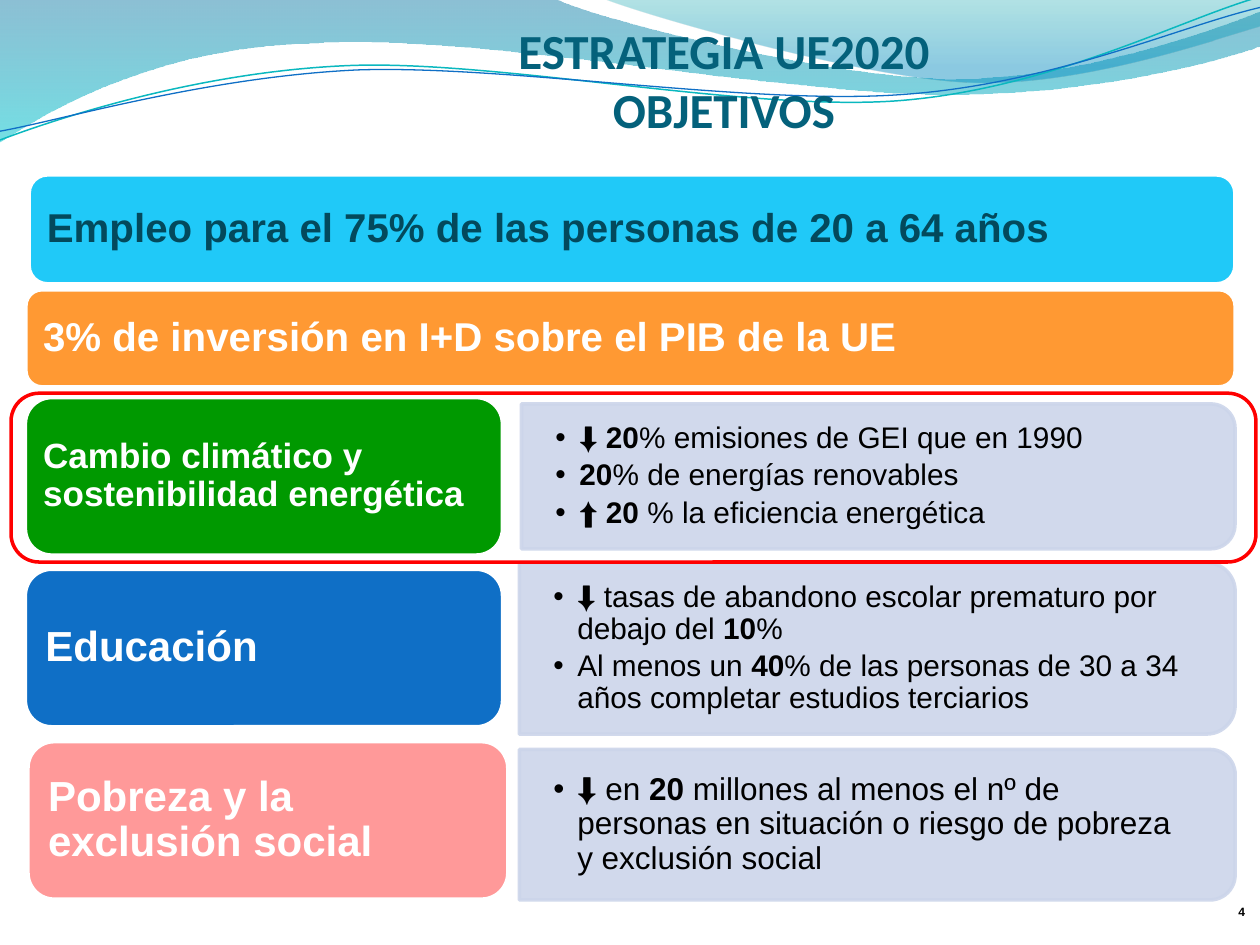
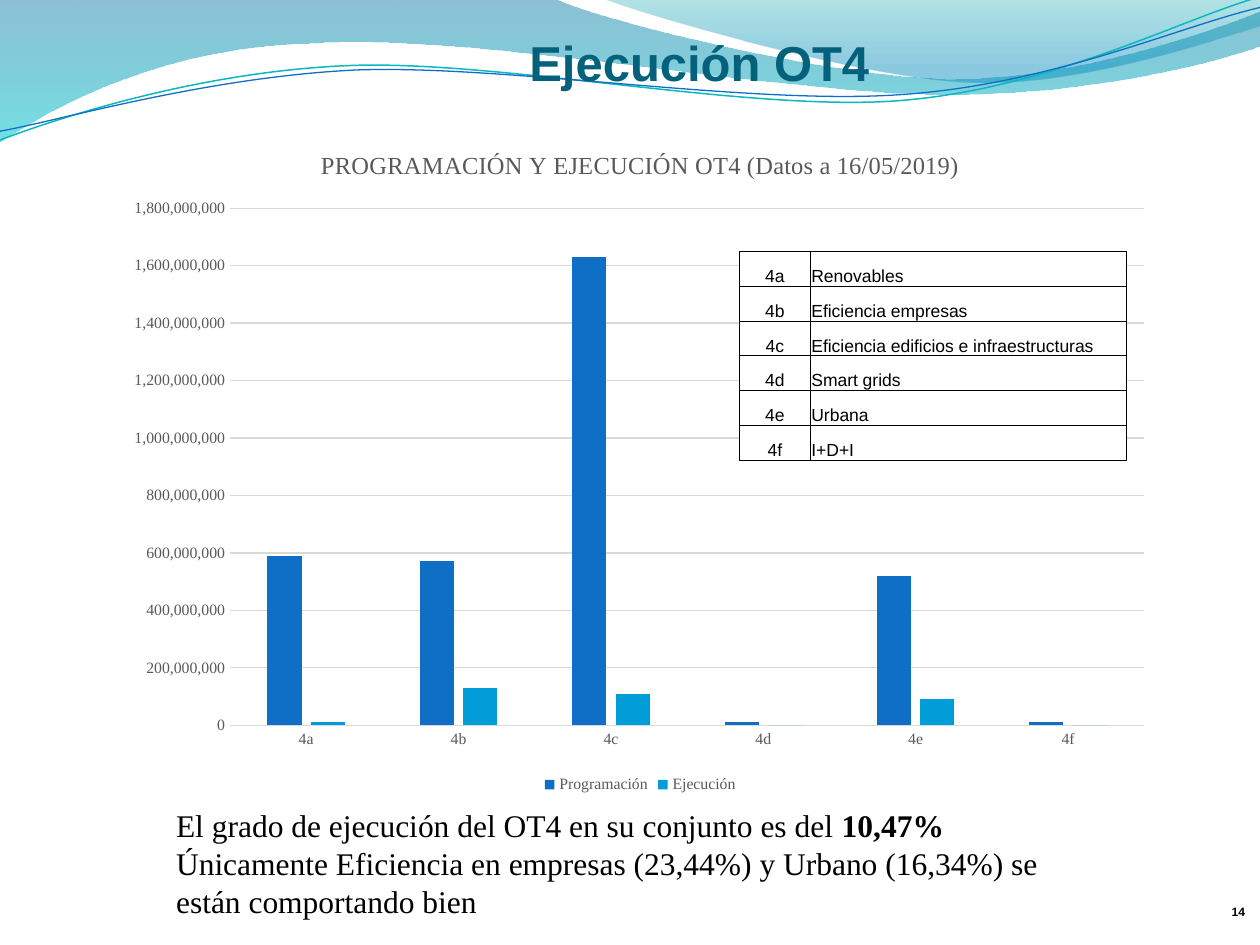
from dataclasses import dataclass

from lxml import etree
from pptx import Presentation
from pptx.chart import data as cd
from pptx.dml.color import RGBColor
from pptx.enum import chart as ch, shapes as sh, text as tx
from pptx.oxml import ns
from pptx.util import Pt


@dataclass(frozen=True)
class Theme:
    title: str = "04617B"
    ink: str = "000000"
    white: str = "FFFFFF"
    gray: str = "595959"
    grid: str = "D9D9D9"
    panel: str = "CCD5EA"
    blue: str = "0F6FC6"
    teal: str = "0AB8BF"
    sky: str = "009DD9"
    red: str = "FF0000"
    sans: str = "Arial"
    serif: str = "Times New Roman"
    head: int = 28
    bar: int = 23
    note: int = 18
    cap: int = 14
    cell: int = 10
    axis: int = 9


T = Theme()
MID, TOP, LOW = tx.MSO_ANCHOR.MIDDLE, tx.MSO_ANCHOR.TOP, tx.MSO_ANCHOR.BOTTOM
LEFT, MIDDLE, RIGHT = tx.PP_ALIGN.LEFT, tx.PP_ALIGN.CENTER, tx.PP_ALIGN.RIGHT
ROUND = sh.MSO_SHAPE.ROUNDED_RECTANGLE

# A pair is a straight step, six numbers are a curve (two controls, end).
BANDS = [
    ([(0, 0), (317, -0.7), (343, 12, 478, 45, 546, 45), (614, 45, 690, 18.7, 720, 6.5),
      (720.7, 26), (708, 32, 626, 55, 537, 54), (448, 54, 275, 20, 185, 24.5),
      (93, 26, 33, 60, -0.7, 81.4)], [(0, "0074A1", 45), (1, "00C6CF", 55)]),
    ([(345, -0.7), (366, 8, 491, 44.6, 554, 47), (616, 49.7, 692, 23, 720, 15),
      (720, 0)], [(0, "00A1A9", 30), (0.8, "008BBF", 45)]),
]
CURVES = [
    ([(0, 80), (34.5, 67, 114, 41, 199, 37.5), (284, 34, 427, 64, 513, 57.6),
      (600, 51, 675, 11, 718.6, -1.4)], T.teal, 0.85),
    ([(0, 75), (34, 69, 118, 44, 204, 40), (290, 37, 430, 60.5, 516, 54),
      (602, 48, 674, 15, 720, 4.3)], T.blue, 0.75),
]


def rgb(code):
    return RGBColor.from_string(code)


def put(obj, **vals):
    for key, val in vals.items():
        setattr(obj, key, val)


def place(shape, box):
    put(shape, **dict(zip(("left", "top", "width", "height"), map(Pt, box))))


def sub(parent, tag, **attrs):
    return etree.SubElement(parent, ns.qn(tag), attrs)


def font(f, size, color, name=T.sans, bold=False):
    put(f, size=Pt(size), name=name, bold=bold)
    f.color.rgb = rgb(color)


def fade(shape, *alphas):
    """Set the opacity, in percent, of the shape's colours in turn."""
    for node, part in zip(shape.element.iter(ns.qn("a:srgbClr")), alphas):
        sub(node, "a:alpha", val=str(part * 1000))


def frame(shape, ins=(7.2, 3.6, 7.2, 3.6), anchor=MID):
    tf = shape.text_frame
    put(tf, word_wrap=True, auto_size=tx.MSO_AUTO_SIZE.NONE, vertical_anchor=anchor)
    sides = ("margin_left", "margin_top", "margin_right", "margin_bottom")
    put(tf, **dict(zip(sides, map(Pt, ins))))
    return tf


def write(tf, lines, size, color, name=T.sans, bold=False, align=LEFT,
          gap=1.0, after=0, dot=None):
    """Fill a frame with paragraphs; **marks** enclose bold words."""
    for i, line in enumerate(lines):
        par = tf.add_paragraph() if i else tf.paragraphs[0]
        ppr = par._p.get_or_add_pPr()
        hang = Pt(13.7) if dot else 0
        ppr.set("marL", str(hang))
        ppr.set("indent", str(-hang))
        if dot:
            sub(ppr, "a:buFont", typeface=T.sans)
            sub(ppr, "a:buChar", char=dot)
        else:
            sub(ppr, "a:buNone")
        put(par, alignment=align, line_spacing=gap, space_before=Pt(0),
            space_after=Pt(after))
        for k, bit in enumerate(line.split("**")):
            if bit:
                run = par.add_run()
                run.text = bit
                font(run.font, size, color, name, bold or k % 2 == 1)


def block(slide, kind, box, fill=None, line=T.white):
    shape = slide.shapes.add_shape(kind, *map(Pt, box))
    shape.shadow.inherit = False
    if fill:
        shape.fill.solid()
        shape.fill.fore_color.rgb = rgb(fill)
    else:
        shape.fill.background()
    shape.line.color.rgb = rgb(line)
    shape.line.width = Pt(2)
    return shape


def outline(slide, steps, close):
    """Join the step ends, then bend the curved steps."""
    ends = [(Pt(s[-2]), Pt(s[-1])) for s in steps]
    pen = slide.shapes.build_freeform(*ends[0], scale=1.0)
    pen.add_line_segments(ends[1:], close=close)
    shape = pen.convert_to_shape()
    shape.shadow.inherit = False
    for leg, step in zip(list(shape.element.iter(ns.qn("a:lnTo"))), steps[1:]):
        if len(step) == 6:
            bend = etree.Element(ns.qn("a:cubicBezTo"))
            for x, y in zip(step[::2], step[1::2]):
                sub(bend, "a:pt", x=str(Pt(x) - shape.left), y=str(Pt(y) - shape.top))
            leg.getparent().replace(leg, bend)
    return shape


def waves(prs, slide):
    """Draw the header waves and hand them to the slide master."""
    made = []
    for steps, stops in BANDS:
        band = outline(slide, steps, True)
        band.line.fill.background()
        band.fill.gradient()
        band.fill.gradient_angle = 270
        for stop, (pos, code, _) in zip(band.fill.gradient_stops, stops):
            stop.position = pos
            stop.color.rgb = rgb(code)
        fade(band, *(s[2] for s in stops))
        made.append(band)
    for steps, code, width in CURVES:
        curve = outline(slide, steps, False)
        curve.fill.background()
        curve.line.color.rgb = rgb(code)
        curve.line.width = Pt(width)
        made.append(curve)
    tree = prs.slide_master.shapes.element
    for i, shape in enumerate(made):
        next(shape.element.iter(ns.qn("p:cNvPr"))).set("id", str(100 + i))
        tree.insert(2 + i, shape.element)


def head(slide, box, lines, name):
    title = slide.shapes.title
    place(title, box)
    write(frame(title, (0, 0, 0, 0)), lines, T.head, T.title, name, True, MIDDLE)


def number(slide, num):
    box = slide.shapes.add_textbox(*map(Pt, (677.8, 508.3, 33.8, 23)))
    write(frame(box, (0, 0, 0, 1.3), LOW), [num], 12, T.ink, bold=True, align=RIGHT)
    box.text_frame.paragraphs[0].runs[0].font._element.set("baseline", "30000")


def bar(slide, box, words, fill, color, size=T.bar, ins=(7.2, 3.6, 7.2, 3.6)):
    shape = block(slide, ROUND, box, fill)
    write(frame(shape, ins), [words], size, color, bold=True, gap=0.9)


def panel(slide, body, box, lines, size):
    """A list on a plate whose right corners are rounded."""
    x, y, w, h = box
    turned = (x + (w - h) / 2, y + (h - w) / 2, h, w)
    plate = block(slide, sh.MSO_SHAPE.ROUND_2_SAME_RECTANGLE, turned, T.panel, T.panel)
    plate.rotation = 90
    fade(plate, 90, 90)
    place(body, box)
    slide.shapes.element.append(body.element)
    write(frame(body, (19.4, 10, 23, 10)), lines, size, T.ink, gap=0.9, after=3, dot="•")


def prune(slide):
    for item in list(slide.placeholders):
        if not item.text_frame.text:
            item.element.getparent().remove(item.element)


def goals(slide):
    head(slide, (212.4, 15, 402.5, 61.2), ["ESTRATEGIA UE2020", "OBJETIVOS"], "Calibri")
    bar(slide, (16.7, 100, 689, 62.2),
        "Empleo para el 75% de las personas de 20 a 64 años", "20C9F8", "03495C")
    bar(slide, (14.8, 165.6, 691, 55.5),
        "3% de inversión en I+D sobre el PIB de la UE", "FF9933", T.white)
    rows = [
        ("Cambio climático y sostenibilidad energética", "009900", 20,
         (14.5, 227.2, 272.6, 90), (298, 230.8, 407.7, 82.8), 17,
         ["⬇ **20**% emisiones de GEI que en 1990", "**20**% de energías renovables",
          "⬆ **20** % la eficiencia energética"]),
        ("Educación", T.blue, 24,
         (14.5, 325.3, 272.7, 90), (296.8, 321.5, 409, 98), 17,
         ["⬇ tasas de abandono escolar prematuro por debajo del **10**%",
          "Al menos un **40**% de las personas de 30 a 34 años completar "
          "estudios terciarios"]),
        ("Pobreza y la exclusión social", "FF9999", 24,
         (16, 423.8, 274.2, 90), (296.8, 428.3, 409, 86), 18,
         ["⬇ en **20** millones al menos el nº de personas en situación o riesgo "
          "de pobreza y exclusión social"]),
    ]
    for i, (name, fill, size, tag, area, small, lines) in enumerate(rows, 1):
        panel(slide, slide.placeholders[i], area, lines, small)
        pad = 5.8 if size == 20 else 7.2
        bar(slide, tag, name, fill, T.white, size, (pad, 3, pad, 3))
    number(slide, "4")
    block(slide, ROUND, (6.3, 224.7, 711.4, 96.5), line=T.red)


def graph(slide, box):
    data = cd.CategoryChartData(number_format="#,##0")
    data.categories = ["4a", "4b", "4c", "4d", "4e", "4f"]
    sets = [("Programación", T.blue, (590, 570, 1630, 10, 520, 10)),
            ("Ejecución", T.sky, (10, 130, 110, 0, 90, 0))]
    for name, _, vals in sets:
        data.add_series(name, [v * 10 ** 6 for v in vals])
    chart = slide.shapes.add_chart(ch.XL_CHART_TYPE.COLUMN_CLUSTERED,
                                   *map(Pt, box), data).chart
    font(chart.font, T.cell, T.ink, T.serif)
    title = chart.chart_title.text_frame
    title.text = "PROGRAMACIÓN Y EJECUCIÓN OT4 (Datos a 16/05/2019)"
    font(title.paragraphs[0].runs[0].font, T.cap, T.gray, T.serif)
    chart.has_legend = True
    put(chart.legend, position=ch.XL_LEGEND_POSITION.BOTTOM, include_in_layout=False)
    font(chart.legend.font, T.axis, T.gray, T.serif)
    plot = chart.plots[0]
    put(plot, gap_width=219, overlap=-27, vary_by_categories=False)
    for part, (_, code, _) in zip(plot.series, sets):
        part.format.fill.solid()
        part.format.fill.fore_color.rgb = rgb(code)
    cat, val = chart.category_axis, chart.value_axis
    for axis in (cat, val):
        put(axis, major_tick_mark=ch.XL_TICK_MARK.NONE, minor_tick_mark=ch.XL_TICK_MARK.NONE)
        font(axis.tick_labels.font, T.axis, T.gray, T.serif)
    put(val, minimum_scale=0, maximum_scale=1800000000, major_unit=200000000)
    put(val.tick_labels, number_format="#,##0", number_format_is_linked=False)
    val.format.line.fill.background()
    for line in (cat.format.line, val.major_gridlines.format.line):
        line.color.rgb = rgb(T.grid)
        line.width = Pt(0.75)
    area = chart.element.find(".//" + ns.qn("c:plotArea"))
    for old in area.findall(ns.qn("c:layout")):
        area.remove(old)
    lay = sub(area, "c:layout")
    area.insert(0, lay)
    spot = sub(lay, "c:manualLayout")
    for key, item in dict(layoutTarget="inner", xMode="edge", yMode="edge",
                          x="0.11", y="0.124", w="0.869", h="0.767").items():
        sub(spot, "c:" + key, val=item)


def border(cell):
    props = cell._tc.get_or_add_tcPr()
    for i, side in enumerate("LRTB"):
        line = sub(props, "a:ln" + side, w=str(Pt(0.5)))
        sub(sub(line, "a:solidFill"), "a:srgbClr", val=T.ink)
        props.insert(i, line)


def key(slide, box):
    """The table that explains the codes."""
    names = ["Renovables", "Eficiencia empresas", "Eficiencia edificios e infraestructuras",
             "Smart grids", "Urbana", "I+D+I"]
    table = slide.shapes.add_table(len(names), 2, *map(Pt, box)).table
    put(table, first_row=False, horz_banding=False)
    for col, width in zip(table.columns, (40.4, box[2] - 40.4)):
        col.width = Pt(width)
    for r, name in enumerate(names):
        table.rows[r].height = Pt(box[3] / len(names))
        for c, (words, align) in enumerate([("4" + "abcdef"[r], MIDDLE), (name, LEFT)]):
            cell = table.cell(r, c)
            put(cell, vertical_anchor=LOW, margin_left=Pt(0.7), margin_right=Pt(0.7),
                margin_top=Pt(0.7), margin_bottom=0)
            cell.fill.solid()
            cell.fill.fore_color.rgb = rgb(T.white)
            border(cell)
            write(cell.text_frame, [words], T.cell, T.ink, align=align)


def results(slide):
    number(slide, "14")
    head(slide, (178.6, 0, 442, 71.3), ["Ejecución OT4"], T.sans)
    graph(slide, (65.3, 71.3, 601.2, 385.2))
    key(slide, (422.6, 143.6, 221.2, 119.4))
    body = slide.placeholders[1]
    place(body, (93.4, 457.2, 538.6, 72.7))
    write(frame(body, anchor=TOP),
          ["El grado de ejecución del OT4 en su conjunto es del **10,47%**",
           "Únicamente Eficiencia en empresas (23,44%) y Urbano (16,34%) se están "
           "comportando bien"], T.note, T.ink, T.serif)


def main():
    prs = Presentation()
    put(prs, slide_width=Pt(720), slide_height=Pt(540))
    layout = prs.slide_layouts.get_by_name("Comparison")
    for i, build in enumerate((goals, results)):
        slide = prs.slides.add_slide(layout)
        if not i:
            waves(prs, slide)
        build(slide)
        prune(slide)
    prs.save("out.pptx")


if __name__ == "__main__":
    main()
